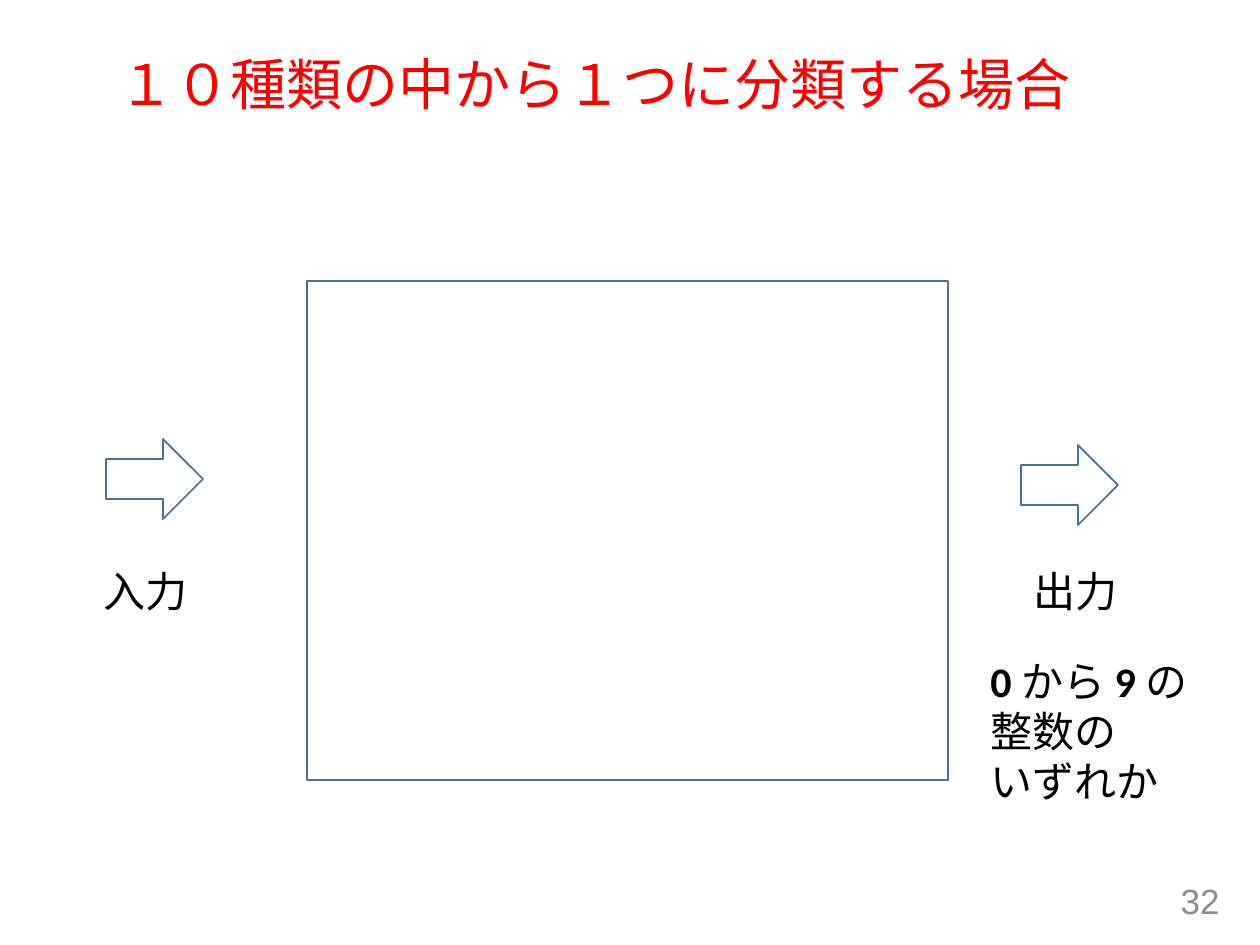
from pptx import Presentation
from pptx.dml.color import RGBColor
from pptx.enum.shapes import MSO_SHAPE as Shape
from pptx.enum.text import MSO_ANCHOR as Anchor, MSO_AUTO_SIZE as AutoSize, PP_ALIGN as Align
from pptx.util import Pt

EMU_PER_PX = 914400 / 126
COLORS = {"title": "FF0000", "text": "000000", "number": "8C8C8C", "outline": "43739E"}


def px(*lengths):
    return [round(n * EMU_PER_PX) for n in lengths]


def add_text(slide, box, paragraphs, size, font="Calibri", color="text",
             anchor=Anchor.TOP, align=Align.LEFT, wrap=True, grow=False, spacing=None):
    """Add a text box; each paragraph is a list of (text, bold) runs."""
    tf = slide.shapes.add_textbox(*px(*box)).text_frame
    tf.word_wrap = wrap
    tf.auto_size = AutoSize.SHAPE_TO_FIT_TEXT if grow else AutoSize.NONE
    tf.vertical_anchor = anchor
    for i, runs in enumerate(paragraphs):
        p = tf.add_paragraph() if i else tf.paragraphs[0]
        p.alignment = align
        p.line_spacing = spacing
        for text, bold in runs:
            r = p.add_run()
            r.text = text
            r.font.name = font
            r.font.size = Pt(size)
            r.font.bold = bold
            r.font.color.rgb = RGBColor.from_string(COLORS[color])


def add_outline(slide, kind, box):
    s = slide.shapes.add_shape(kind, *px(*box))
    s.shadow.inherit = False
    s.fill.background()
    s.line.color.rgb = RGBColor.from_string(COLORS["outline"])
    s.line.width = Pt(1)


def add_port(slide, label, arrow_at, label_at):
    """Add a block arrow with its label below."""
    add_outline(slide, Shape.RIGHT_ARROW, (*arrow_at, 97, 80))
    add_text(slide, (*label_at, 111, 63), [[(label, False)]], 24, wrap=False, grow=True)


def main():
    prs = Presentation()
    prs.slide_width, prs.slide_height = px(1260, 945)
    slide = prs.slides.add_slide(prs.slide_layouts[6])

    add_text(slide, (106, 6, 1051, 163), [[("１０種類の中から１つに分類する場合", False)]], 32,
             font="Arial", color="title", anchor=Anchor.MIDDLE, spacing=0.9)
    add_text(slide, (949, 876, 283, 50), [[("32", False)]], 20,
             font="Arial", color="number", anchor=Anchor.MIDDLE, align=Align.RIGHT)
    output_note = [
        [("0 ", True), ("から ", False), ("9 ", True), ("の", False)],
        [("整数の", False)],
        [("いずれか", False)],
    ]
    add_text(slide, (978, 649, 253, 165), output_note, 24, grow=True)

    add_outline(slide, Shape.RECTANGLE, (307, 281, 641, 499))
    add_port(slide, "入力", (106, 439), (91, 559))
    add_port(slide, "出力", (1021, 445), (1021, 559))

    prs.save("out.pptx")


if __name__ == "__main__":
    main()
